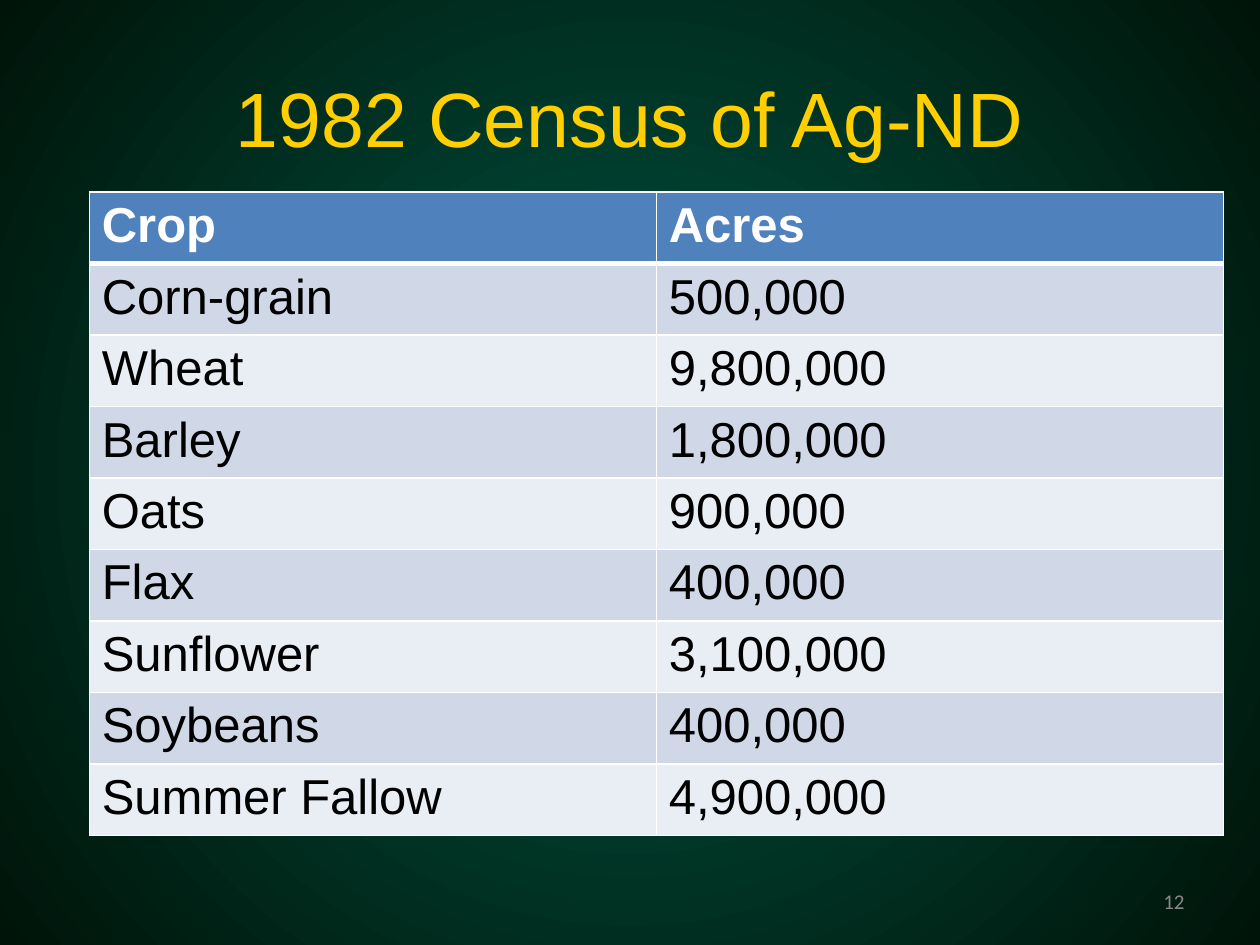
import pptx
import pptx.util
import pptx.dml.color
import pptx.enum.text
import pptx.oxml
import pptx.oxml.ns

Cm, Pt = pptx.util.Cm, pptx.util.Pt
RGBColor = pptx.dml.color.RGBColor
ALIGN = pptx.enum.text.PP_ALIGN
ANCHOR = pptx.enum.text.MSO_ANCHOR
qn = pptx.oxml.ns.qn

GREEN = RGBColor(0x00, 0x56, 0x43)
DARK_GREEN = RGBColor(0x00, 0x14, 0x09)
GOLD = RGBColor(0xFF, 0xCF, 0x01)
WHITE = RGBColor(0xFF, 0xFF, 0xFF)
BLACK = RGBColor(0x00, 0x00, 0x00)
GREY = RGBColor(0x89, 0x89, 0x89)
HEADER_BLUE = RGBColor(0x4F, 0x81, 0xBD)
BANDS = (RGBColor(0xD0, 0xD8, 0xE8), RGBColor(0xE9, 0xED, 0xF4))

CROPS = [
    ("Crop", "Acres"),
    ("Corn-grain", "500,000"),
    ("Wheat", "9,800,000"),
    ("Barley", "1,800,000"),
    ("Oats", "900,000"),
    ("Flax", "400,000"),
    ("Sunflower", "3,100,000"),
    ("Soybeans", "400,000"),
    ("Summer Fallow", "4,900,000"),
]


def set_background(s):
    """Fill the slide with a gradient that darkens from the centre."""
    fill = s.background.fill
    fill.gradient()
    for stop, color in zip(fill.gradient_stops, (GREEN, DARK_GREEN)):
        stop.color.rgb = color
    lin = next(s.element.iter(qn("a:lin")))
    lin.getparent().replace(lin, pptx.oxml.parse_xml(
        f'<a:path {pptx.oxml.ns.nsdecls("a")} path="circle">'
        '<a:fillToRect l="50000" t="50000" r="50000" b="50000"/></a:path>'))


def format_run(r, font, size, color, bold=False):
    r.font.name = font
    r.font.size = Pt(size)
    r.font.color.rgb = color
    r.font.bold = bold


def add_text(s, text, box, font, size, color, align):
    tf = s.shapes.add_textbox(*map(Cm, box)).text_frame
    tf.word_wrap = True
    tf.vertical_anchor = ANCHOR.MIDDLE
    tf.text = text
    p = tf.paragraphs[0]
    p.alignment = align
    format_run(p.runs[0], font, size, color)


def set_borders(cell, bottom):
    """Draw white cell borders, placed ahead of the cell fill."""
    tc_pr = cell._tc.get_or_add_tcPr()
    widths = {"lnL": 1, "lnR": 1, "lnT": 1, "lnB": bottom}
    for i, (side, width) in enumerate(widths.items()):
        tc_pr.insert(i, pptx.oxml.parse_xml(
            f'<a:{side} {pptx.oxml.ns.nsdecls("a")} w="{Pt(width)}">'
            f'<a:solidFill><a:srgbClr val="{WHITE}"/></a:solidFill></a:{side}>'))


def add_crop_table(s):
    row_height = Cm(1.355)
    table = s.shapes.add_table(
        len(CROPS), 2, Cm(1.8), Cm(3.87), Cm(22.86),
        row_height * len(CROPS)).table
    for i, row in enumerate(CROPS):
        header = i == 0
        for j, text in enumerate(row):
            cell = table.cell(i, j)
            cell.text = text
            format_run(cell.text_frame.paragraphs[0].runs[0], "Arial", 28,
                       WHITE if header else BLACK, header)
            cell.fill.solid()
            cell.fill.fore_color.rgb = HEADER_BLUE if header else BANDS[(i - 1) % 2]
            # A heavier rule separates the header; row 1 shares that edge
            set_borders(cell, 3 if header else 1)
            if i == 1:
                cell._tc.tcPr.find(qn("a:lnT")).set("w", str(Pt(3)))


def main():
    prs = pptx.Presentation()
    prs.slide_width, prs.slide_height = Cm(25.4), Cm(19.05)
    s = prs.slides.add_slide(prs.slide_layouts[6])
    set_background(s)

    # Title
    add_text(s, "1982 Census of Ag-ND", (1.27, 0.76, 22.86, 3.18),
             "Arial", 44, GOLD, ALIGN.CENTER)
    # Crop acreage
    add_crop_table(s)
    # Slide number
    add_text(s, "12", (18.21, 17.65, 5.92, 1.02),
             "Calibri", 12, GREY, ALIGN.RIGHT)

    prs.save("out.pptx")


if __name__ == "__main__":
    main()
